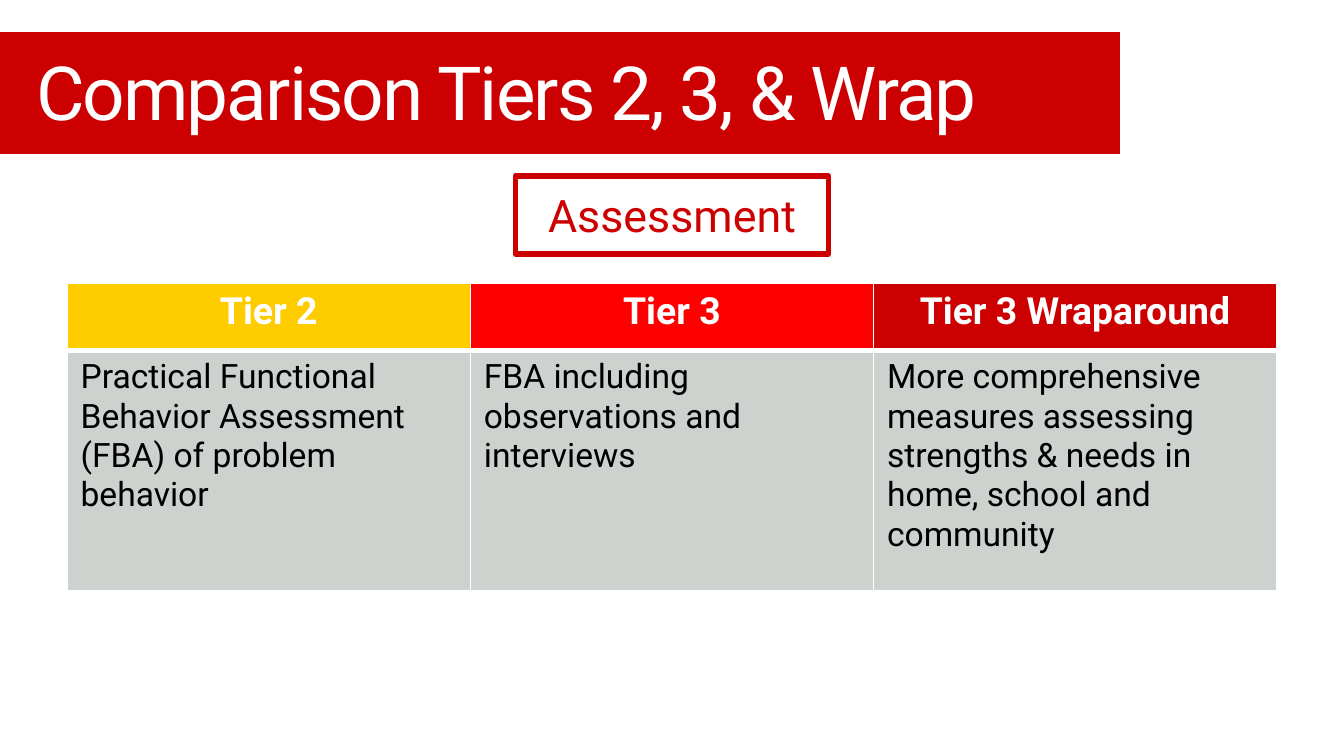
from lxml import etree
from pptx import Presentation, util as u
from pptx.dml.color import RGBColor
from pptx.enum import shapes, text
from pptx.oxml.ns import qn

# Content
TITLE = "Comparison Tiers 2, 3, & Wrap"
TOPIC = "Assessment"
TIERS = [
    ("Tier 2", "gold", "Practical Functional Behavior Assessment (FBA) of problem behavior"),
    ("Tier 3", "red", "FBA including observations and interviews"),
    ("Tier 3 Wraparound", "crimson", "More comprehensive measures assessing "
     "strengths & needs in home, school and community"),
]
COLORS = {"white": "FFFFFF", "black": "000000", "gold": "FFCC00",
          "red": "FF0000", "crimson": "CC0000", "gray": "CDD2CE"}
FONT = "Roboto"

# Layout in inches, on a 16:9 slide
WIDTH = 10
HEIGHT = WIDTH * 9 / 16
MARGIN = 0.05 * WIDTH
TABLE_TOP = 2.11
ROW_HEIGHTS = [0.5, 1.79]
COLUMN = (WIDTH - 2 * MARGIN) / len(TIERS)
TOPIC_WIDTH = 2.33


def color(name):
    return RGBColor.from_string(COLORS[name])


def paint(target, name):
    target.fill.solid()
    target.fill.fore_color.rgb = color(name)


def write(frame, words, size, ink, bold=False, align=text.PP_ALIGN.LEFT):
    frame.text = words
    frame.word_wrap = True
    para = frame.paragraphs[0]
    para.alignment = align
    font = para.runs[0].font
    font.name, font.size, font.bold = FONT, u.Pt(size), bold
    font.color.rgb = color(ink)
    return para.runs[0]


def add_box(page, left, top, width, height, fill, line, weight):
    box = page.shapes.add_shape(shapes.MSO_SHAPE.RECTANGLE,
                                *map(u.Inches, (left, top, width, height)))
    box.shadow.inherit = False
    paint(box, fill)
    box.line.color.rgb = color(line)
    box.line.width = u.Pt(weight)
    return box


def set_borders(cell, bottom):
    props = cell._tc.get_or_add_tcPr()
    weights = {"lnL": 1, "lnR": 1, "lnT": 1, "lnB": bottom}
    # Borders come before the fill in the cell properties
    for place, (tag, weight) in enumerate(weights.items()):
        line = etree.Element(qn("a:" + tag), w=str(u.Pt(weight)))
        fill = etree.SubElement(line, qn("a:solidFill"))
        etree.SubElement(fill, qn("a:srgbClr"), val=COLORS["white"])
        props.insert(place, line)


deck = Presentation()
deck.slide_width, deck.slide_height = u.Inches(WIDTH), u.Inches(HEIGHT)
page = deck.slides.add_slide(deck.slide_layouts[6])

# Title banner
add_box(page, -0.08, 0.23, 8.42, 0.92, "crimson", "white", 0.75)
title = page.shapes.add_textbox(*map(u.Inches, (0.17, 0.27, 8.17, 0.81)))
title.text_frame.vertical_anchor = text.MSO_ANCHOR.MIDDLE
span = write(title.text_frame, TITLE, 40, "white")
span.font._element.set("spc", "-100")

# Tier table
table = page.shapes.add_table(
    len(ROW_HEIGHTS), len(TIERS), u.Inches(MARGIN), u.Inches(TABLE_TOP),
    u.Inches(COLUMN * len(TIERS)), u.Inches(sum(ROW_HEIGHTS))).table
for row, height in zip(table.rows, ROW_HEIGHTS):
    row.height = u.Inches(height)
for index, (name, fill, detail) in enumerate(TIERS):
    table.columns[index].width = u.Inches(COLUMN)
    head, body = table.cell(0, index), table.cell(1, index)
    write(head.text_frame, name, 20, "white", True, text.PP_ALIGN.CENTER)
    write(body.text_frame, detail, 18, "black")
    paint(head, fill)
    paint(body, "gray")
    set_borders(head, 3)
    set_borders(body, 1)

# Topic label, centred above the table
topic = add_box(page, (WIDTH - TOPIC_WIDTH) / 2, 1.31, TOPIC_WIDTH, 0.58, "white", "crimson", 3)
etree.SubElement(topic.line._get_or_add_ln(), qn("a:round"))
topic.text_frame.vertical_anchor = text.MSO_ANCHOR.MIDDLE
write(topic.text_frame, TOPIC, 24, "crimson", align=text.PP_ALIGN.CENTER)

deck.save("out.pptx")
